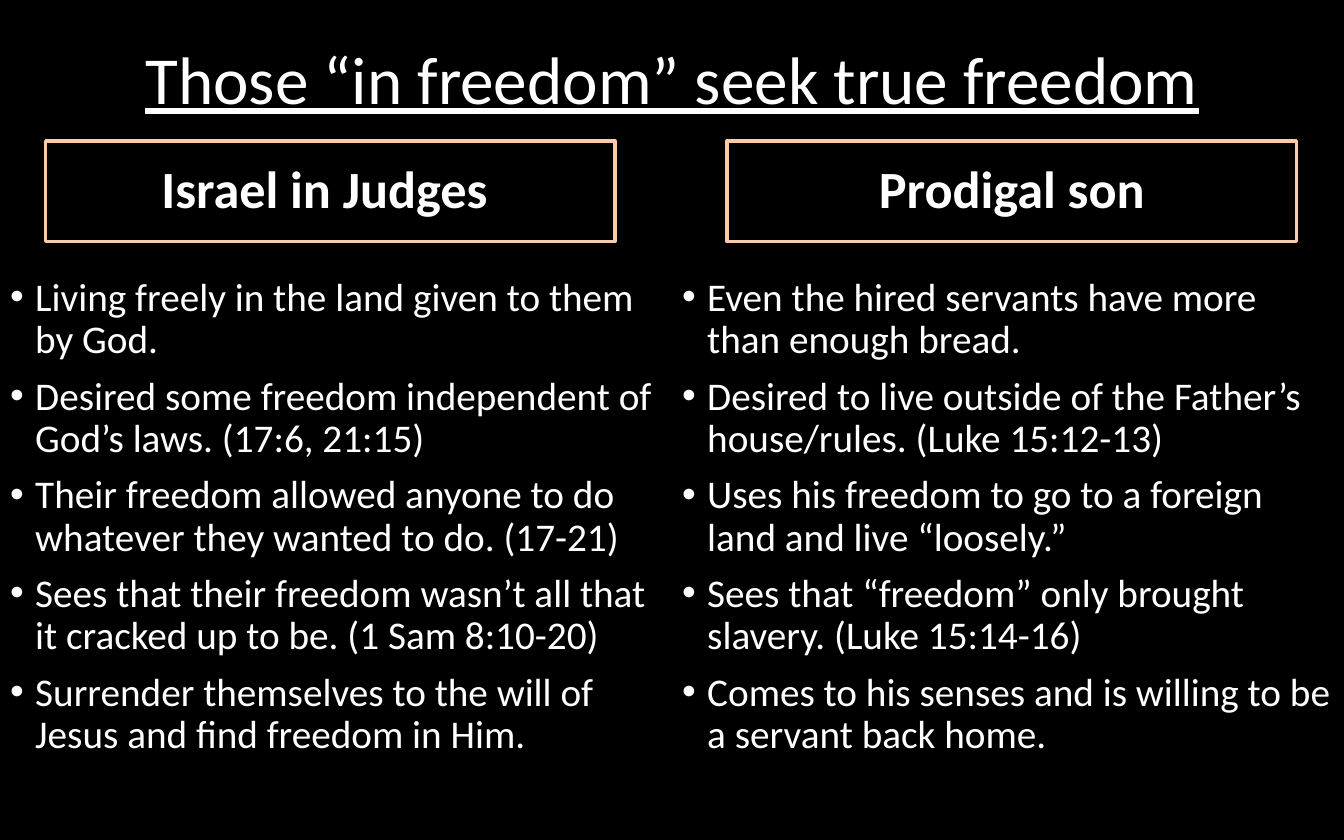
from collections import namedtuple
from dataclasses import dataclass

from lxml.etree import SubElement
from pptx import Presentation
from pptx.dml.color import RGBColor
from pptx.enum.shapes import MSO_SHAPE
from pptx.enum.text import MSO_ANCHOR, PP_ALIGN
from pptx.oxml.ns import qn
from pptx.util import Pt

Box = namedtuple("Box", "left top width height")


@dataclass(frozen=True)
class Theme:
    """Colours, font and sizes shared by the whole slide."""

    background: RGBColor = RGBColor(0x00, 0x00, 0x00)
    text: RGBColor = RGBColor(0xFF, 0xFF, 0xFF)
    outline: RGBColor = RGBColor(0xF8, 0xCB, 0xAD)
    font: str = "Calibri"
    title_size: float = 36
    heading_size: float = 28
    point_size: float = 21
    outline_width: float = 1.75
    line_spacing: float = 0.9
    space_before: float = 7.5
    indent: float = 13.5
    inset_x: float = 5.4
    inset_y: float = 2.7


THEME = Theme()

COMPARISON = [
    ("Israel in Judges ", [
        "Living freely in the land given to them by God.",
        "Desired some freedom independent of God’s laws. (17:6, 21:15)",
        "Their freedom allowed anyone to do whatever they wanted to do. (17-21)",
        "Sees that their freedom wasn’t all that it cracked up to be. (1 Sam 8:10-20)",
        "Surrender themselves to the will of Jesus and find freedom in Him.",
    ]),
    ("Prodigal son", [
        "Even the hired servants have more than enough bread.",
        "Desired to live outside of the Father’s house/rules. (Luke 15:12-13)",
        "Uses his freedom to go to a foreign land and live “loosely.”",
        "Sees that “freedom” only brought slavery. (Luke 15:14-16)",
        "Comes to his senses and is willing to be a servant back home.",
    ]),
]


def in_points(box):
    """Return the sides of a box as lengths."""
    return [Pt(side) for side in box]


def prepare_frame(frame, anchor):
    """Set wrapping, anchor and insets of a text frame."""
    frame.word_wrap = True
    frame.vertical_anchor = anchor
    frame.margin_left = frame.margin_right = Pt(THEME.inset_x)
    frame.margin_top = frame.margin_bottom = Pt(THEME.inset_y)


def write(paragraph, text, *, size, align=PP_ALIGN.LEFT, before=0,
          bold=False, underline=False, bullet=False):
    """Fill a paragraph with one formatted run."""
    paragraph.alignment = align
    paragraph.line_spacing = THEME.line_spacing
    paragraph.space_before = Pt(before)
    if bullet:
        properties = paragraph._p.get_or_add_pPr()
        properties.set("marL", str(Pt(THEME.indent)))
        properties.set("indent", str(-Pt(THEME.indent)))
        SubElement(properties, qn("a:buFont"), typeface="Arial")
        SubElement(properties, qn("a:buChar"), char="•")
    run = paragraph.add_run()
    run.text = text
    run.font.name = THEME.font
    run.font.size = Pt(size)
    run.font.color.rgb = THEME.text
    run.font.bold = bold
    run.font.underline = underline


def add_title(slide, box, text):
    """Place the underlined title."""
    frame = slide.shapes.add_textbox(*in_points(box)).text_frame
    prepare_frame(frame, MSO_ANCHOR.MIDDLE)
    write(frame.paragraphs[0], text, size=THEME.title_size,
          align=PP_ALIGN.CENTER, underline=True)


def add_heading(slide, box, text):
    """Place an outlined column heading."""
    heading = slide.shapes.add_shape(MSO_SHAPE.RECTANGLE, *in_points(box))
    heading.shadow.inherit = False
    heading.fill.background()
    heading.line.color.rgb = THEME.outline
    heading.line.width = Pt(THEME.outline_width)
    prepare_frame(heading.text_frame, MSO_ANCHOR.MIDDLE)
    write(heading.text_frame.paragraphs[0], text, size=THEME.heading_size,
          align=PP_ALIGN.CENTER, before=THEME.space_before, bold=True)


def add_points(slide, box, points):
    """Place a bulleted list."""
    frame = slide.shapes.add_textbox(*in_points(box)).text_frame
    prepare_frame(frame, MSO_ANCHOR.TOP)
    for index, point in enumerate(points):
        paragraph = frame.add_paragraph() if index else frame.paragraphs[0]
        write(paragraph, point, size=THEME.point_size,
              before=THEME.space_before, bullet=True)


def add_column(slide, box, heading, points, heading_offset):
    """Place a heading and its list in one column."""
    add_heading(slide, Box(box.left + heading_offset, box.top, 305, 54), heading)
    list_offset = 70.5
    add_points(slide, Box(box.left, box.top + list_offset, box.width,
                          box.height - list_offset), points)


def main():
    """Build and save the slide."""
    deck = Presentation()
    deck.slide_width, deck.slide_height = Pt(720), Pt(450)
    slide = deck.slides.add_slide(deck.slide_layouts[6])
    slide.background.fill.solid()
    slide.background.fill.fore_color.rgb = THEME.background
    add_title(slide, Box(49.5, 0.75, 621, 87), "Those “in freedom” seek true freedom")
    column_width = 360
    for index, (heading, points) in enumerate(COMPARISON):
        column = Box(index * column_width, 75.5, column_width, 359.5)
        add_column(slide, column, heading, points, heading_offset=24.5 + 5 * index)
    deck.save("out.pptx")


if __name__ == "__main__":
    main()
